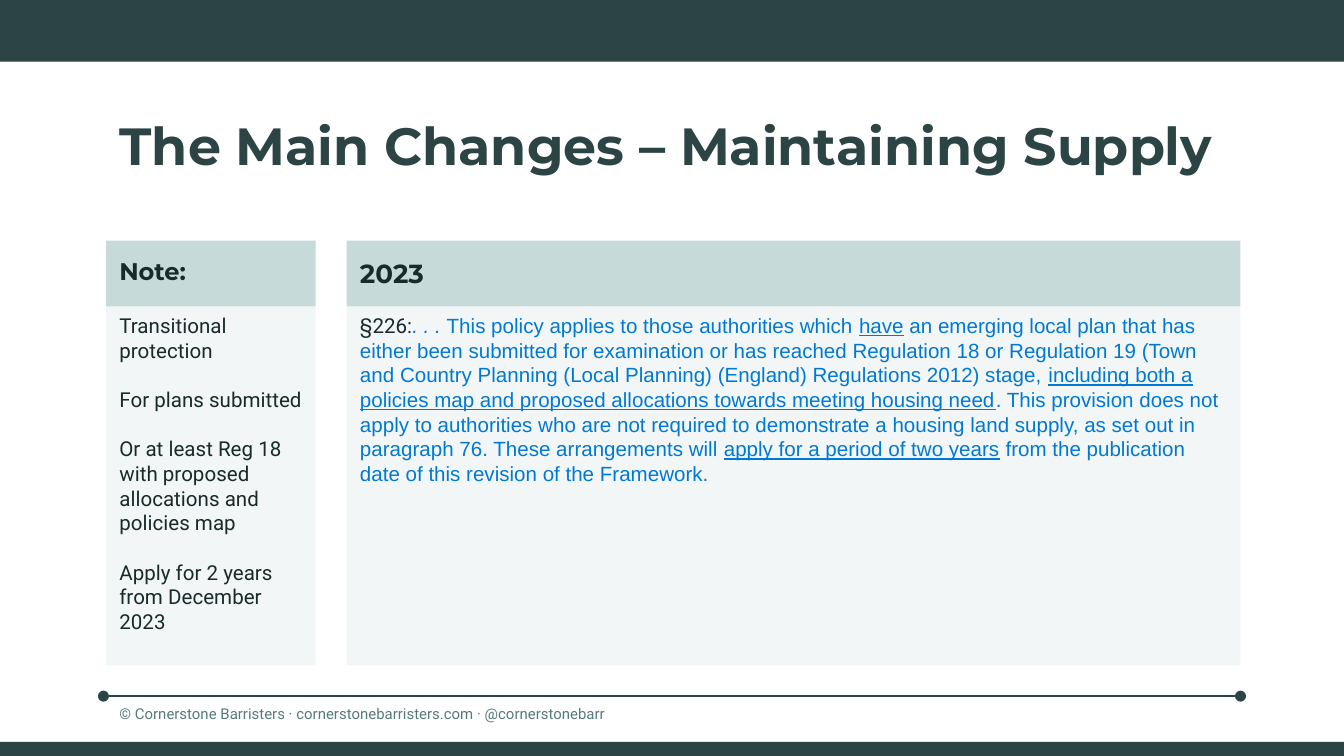
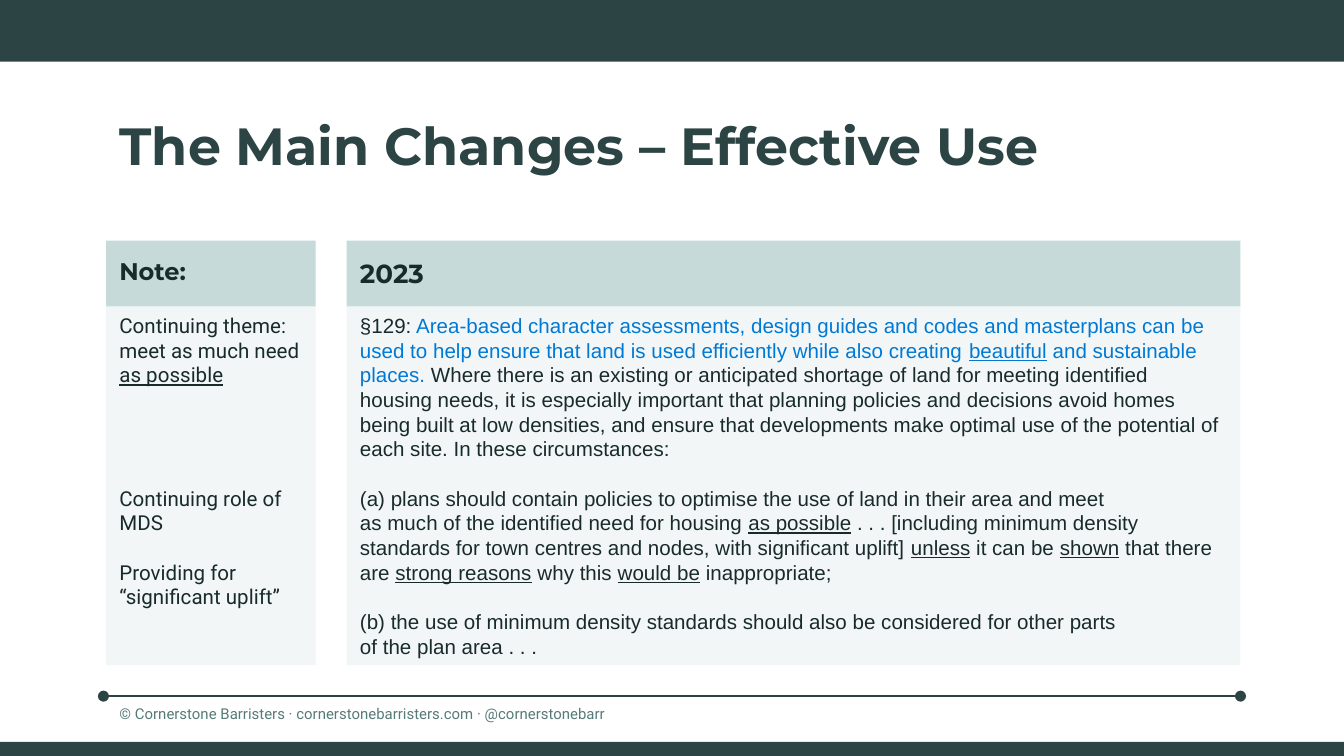
from dataclasses import dataclass

from lxml.etree import SubElement
from pptx import Presentation
from pptx.dml.color import RGBColor
from pptx.enum.shapes import MSO_CONNECTOR, MSO_SHAPE
from pptx.enum.text import MSO_ANCHOR, MSO_AUTO_SIZE, PP_ALIGN
from pptx.oxml.ns import qn
from pptx.util import Inches, Pt


@dataclass(frozen=True)
class Theme:
    """Colours, fonts, type sizes and spacing of the slides."""
    dark: str = "2C4444"
    text: str = "182B2A"
    muted: str = "567A78"
    amended: str = "0079D5"
    header: str = "C6DADA"
    panel: str = "F2F6F6"
    heading_font: str = "Montserrat"
    note_font: str = "Roboto"
    policy_font: str = "Arial"
    title_size: float = 28
    year_size: float = 14
    note_size: float = 12.9
    body_size: float = 11
    footer_size: float = 8
    body_line: float = 13.2


THEME = Theme()
SLIDE_WIDTH = 10
SLIDE_HEIGHT = SLIDE_WIDTH * 9 / 16
BAND_WIDTH = 10.14
LEFT, RIGHT = 0.79, 9.23
NOTE_WIDTH, POLICY_LEFT = 1.56, 2.58
HEADER_TOP, HEADER_HEIGHT, PANEL_HEIGHT = 1.79, 0.49, 2.67
FOOTER = "© Cornerstone Barristers · cornerstonebarristers.com · @cornerstonebarr"


def font_format(name, size, color, **extra):
    """Return the format values of a font."""
    return {"name": name, "size": Pt(size), "color": color, **extra}


TITLE = font_format(THEME.heading_font, THEME.title_size, THEME.dark, bold=True)
NOTE_HEADER = font_format(THEME.heading_font, THEME.note_size, THEME.text, bold=True)
YEAR_HEADER = font_format(THEME.heading_font, THEME.year_size, THEME.text, bold=True)
NOTE = font_format(THEME.note_font, THEME.body_size, THEME.text)
POLICY = font_format(THEME.policy_font, THEME.body_size, THEME.text)
AMENDED = {**POLICY, "color": THEME.amended}
AMENDED_ITALIC = {**AMENDED, "italic": True}
SMALL = font_format(THEME.note_font, THEME.footer_size, THEME.muted)


def underlined(style):
    """Return a style with an underline added."""
    return {**style, "underline": True}


def alternate(style, *texts):
    """Return runs in which every second text is underlined."""
    styles = (style, underlined(style))
    return [(text, styles[index % 2]) for index, text in enumerate(texts)]


def set_values(target, values):
    """Set attributes of an object from a dict."""
    for name, value in values.items():
        if name == "color":
            target.color.rgb = RGBColor.from_string(value)
        else:
            setattr(target, name, value)


def write_text(shape, paragraphs, line_spacing=None, **frame_values):
    """Write (blank lines before, runs) paragraphs into a shape."""
    frame = shape.text_frame
    set_values(frame, {
        "word_wrap": True, "auto_size": MSO_AUTO_SIZE.NONE,
        "margin_left": Inches(0.1), "margin_right": Inches(0.1),
        "margin_top": Inches(0.05), "margin_bottom": Inches(0.05),
        "vertical_anchor": MSO_ANCHOR.TOP, **frame_values})
    for index, (gap, runs) in enumerate(paragraphs):
        paragraph = frame.add_paragraph() if index else frame.paragraphs[0]
        set_values(paragraph, {
            "alignment": PP_ALIGN.LEFT, "line_spacing": line_spacing,
            "space_before": Pt(gap * THEME.body_line), "space_after": Pt(0)})
        for text, style in runs:
            run = paragraph.add_run()
            run.text = text
            set_values(run.font, style)


def add_block(slide, left, top, width, height, fill):
    """Add a plain filled rectangle."""
    shape = slide.shapes.add_shape(
        MSO_SHAPE.RECTANGLE, Inches(left), Inches(top), Inches(width), Inches(height))
    shape.shadow.inherit = False
    shape.fill.solid()
    shape.fill.fore_color.rgb = RGBColor.from_string(fill)
    shape.line.fill.background()
    return shape


def add_footer_rule(slide):
    """Add the footer line with a dot at each end."""
    rule = slide.shapes.add_connector(
        MSO_CONNECTOR.STRAIGHT, Inches(0.77), Inches(5.18), Inches(RIGHT), Inches(5.18))
    set_values(rule.line, {"color": THEME.dark, "width": Pt(0.75)})
    line = rule.line._get_or_add_ln()
    for end in ("a:headEnd", "a:tailEnd"):
        SubElement(line, qn(end), type="oval")
    SubElement(rule._element.spPr, qn("a:effectLst"))


def add_frame(slide):
    """Add the bands, the footer rule and the footer text."""
    add_footer_rule(slide)
    for top, height in ((0, 0.46), (5.52, 0.11)):
        add_block(slide, 0, top, BAND_WIDTH, height, THEME.dark)
    footer = slide.shapes.add_textbox(
        Inches(LEFT), Inches(5.14), Inches(4.95), Inches(0.31))
    write_text(footer, [(0, [(FOOTER, SMALL)])],
               margin_top=Inches(0.1), margin_bottom=Inches(0.1))


def add_title(slide, text):
    """Place and format the title placeholder."""
    title = slide.shapes.title
    set_values(title, {"left": Inches(LEFT), "top": Inches(0.79),
                       "width": Inches(RIGHT - LEFT), "height": Inches(0.58)})
    write_text(title, [(0, [(text, TITLE)])], line_spacing=1.0)


def add_column(slide, left, width, heading, heading_style, paragraphs,
               heading_spacing=1.0, right_margin=0.1):
    """Add a header block with a text panel below it."""
    panel = add_block(slide, left, HEADER_TOP + HEADER_HEIGHT, width, PANEL_HEIGHT, THEME.panel)
    write_text(panel, paragraphs, line_spacing=Pt(THEME.body_line),
               margin_right=Inches(right_margin))
    header = add_block(slide, left, HEADER_TOP, width, HEADER_HEIGHT, THEME.header)
    write_text(header, [(0, [(heading, heading_style)])], line_spacing=heading_spacing,
               vertical_anchor=MSO_ANCHOR.MIDDLE)


def add_change_slide(presentation, title, notes, policy):
    """Add a slide that sets notes beside the 2023 policy text."""
    slide = presentation.slides.add_slide(presentation.slide_layouts[5])
    add_frame(slide)
    add_title(slide, title)
    add_column(slide, LEFT, NOTE_WIDTH, "Note:", NOTE_HEADER, notes, heading_spacing=0.8)
    add_column(slide, POLICY_LEFT, RIGHT - POLICY_LEFT, "2023", YEAR_HEADER, policy,
               right_margin=0.13)


SUPPLY_NOTES = [
    (0, [("Transitional protection", NOTE)]),
    (1, [("For plans submitted", NOTE)]),
    (1, [("Or at least Reg 18 with proposed allocations and policies map", NOTE)]),
    (1, [("Apply for 2 years from December 2023", NOTE)]),
]
SUPPLY_POLICY = [
    (0, [("§226:", NOTE), (". . . ", AMENDED_ITALIC)] + alternate(
        AMENDED,
        "This policy applies to those authorities which ",
        "have",
        " an emerging local plan that has either been submitted for examination or has "
        "reached Regulation 18 or Regulation 19 (Town and Country Planning (Local Planning) "
        "(England) Regulations 2012) stage, ",
        "including both a policies map and proposed allocations towards meeting housing need",
        ". This provision does not apply to authorities who are not required to demonstrate "
        "a housing land supply, as set out in paragraph 76. These arrangements will ",
        "apply for a period of two years",
        " from the publication date of this revision of the Framework.")),
]
USE_NOTES = [
    (0, alternate(NOTE, "Continuing theme: meet as much need ", "as possible")),
    (4, [("Continuing role of MDS", NOTE)]),
    (1, [("Providing for “significant uplift”", NOTE)]),
]
USE_POLICY = [
    (0, [("§129:", POLICY)] + alternate(
        AMENDED,
        " Area-based character assessments, design guides and codes and masterplans can be "
        "used to help ensure that land is used efficiently while also creating ",
        "beautiful",
        " and sustainable places. ") + [(
            "Where there is an existing or anticipated shortage of land for meeting identified "
            "housing needs, it is especially important that planning policies and decisions "
            "avoid homes being built at low densities, and ensure that developments make "
            "optimal use of the potential of each site. In these circumstances:", POLICY)]),
    (1, [("(a) plans should contain policies to optimise the use of land in their area "
          "and meet", POLICY)]),
    (0, alternate(
        POLICY,
        "as much of the identified need for housing ", "as possible",
        " . . . [including minimum density standards for town centres and nodes, "
        "with significant uplift] ", "unless",
        " it can be ", "shown",
        " that there are ", "strong reasons",
        " why this ", "would be",
        " inappropriate;")),
    (1, [("(b) the use of minimum density standards should also be considered for "
          "other parts", POLICY)]),
    (0, [("of the plan area . . .", POLICY)]),
]


def main():
    """Build and save the presentation."""
    presentation = Presentation()
    set_values(presentation, {"slide_width": Inches(SLIDE_WIDTH),
                              "slide_height": Inches(SLIDE_HEIGHT)})
    add_change_slide(presentation, "The Main Changes – Maintaining Supply",
                     SUPPLY_NOTES, SUPPLY_POLICY)
    add_change_slide(presentation, "The Main Changes – Effective Use",
                     USE_NOTES, USE_POLICY)
    presentation.save("out.pptx")


if __name__ == "__main__":
    main()
